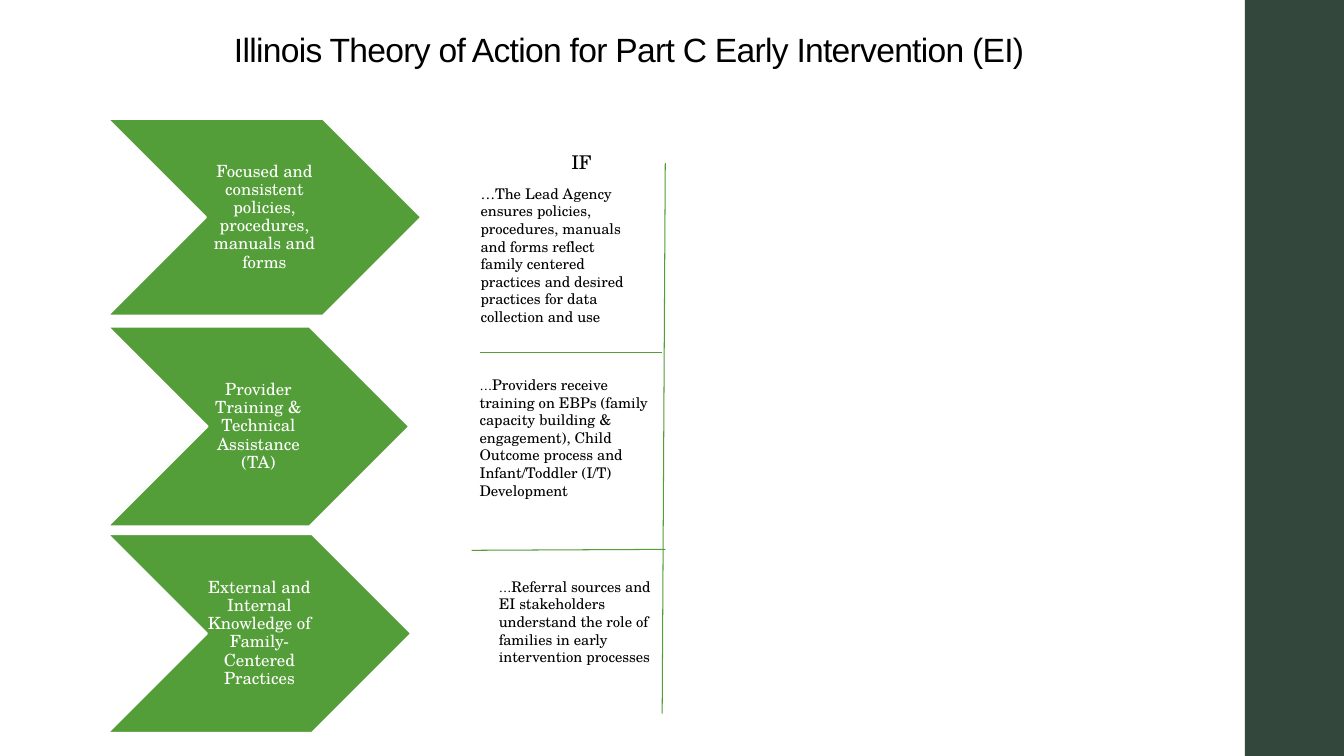
import pptx
import pptx.util
import pptx.dml.color
import pptx.enum.shapes
import pptx.enum.text
import pptx.oxml.ns
import lxml.etree

Pt = pptx.util.Pt
RGBColor = pptx.dml.color.RGBColor
ALIGN = pptx.enum.text.PP_ALIGN
ANCHOR = pptx.enum.text.MSO_ANCHOR
SHAPE = pptx.enum.shapes.MSO_SHAPE
STRAIGHT = pptx.enum.shapes.MSO_CONNECTOR.STRAIGHT

GREEN = RGBColor(0x54, 0x9E, 0x39)
DARK_GREEN = RGBColor(0x34, 0x47, 0x3D)
WHITE = RGBColor(0xFF, 0xFF, 0xFF)
BLACK = RGBColor(0x00, 0x00, 0x00)
TITLE_FONT = "Arial"
BODY_FONT = "TeX Gyre Schola"

SLIDE_WIDTH, SLIDE_HEIGHT = 960, 540
STRATEGY_PITCH = 148.3

# Width and height of each chevron, with its label
STRATEGIES = [
    (223.9, 140.4, "Focused and consistent policies, procedures, manuals and forms"),
    (215.3, 142.6, "Provider Training & Technical Assistance (TA)"),
    (216.7, 141.8, "External and Internal Knowledge of Family-Centered Practices"),
]

# Box relative to the IF column, anchor, size of the ellipsis, and wording
CONDITIONS = [
    ((0.7, 23.8, 124.6, 108.7), ANCHOR.TOP, 10.5,
     "The Lead Agency ensures policies, procedures, manuals and forms reflect "
     "family centered practices and desired practices for data collection and use"),
    ((0, 159.8, 137.5, 96.5), ANCHOR.MIDDLE, 9,
     "Providers receive training on EBPs (family capacity building & engagement), "
     "Child Outcome process and Infant/Toddler (I/T) Development"),
    ((13.7, 304.6, 125.3, 70.6), ANCHOR.TOP, 9,
     "Referral sources and EI stakeholders understand the role of families in "
     "early intervention processes"),
]

# Start and end of each divider, relative to the IF column
DIVIDERS = [
    ((7.2, 147.6), (137.5, 147.6)),
    ((1.4, 288.7), (139.7, 288)),
    ((139.7, 12.2), (137.5, 405.4)),
]


def add_run(paragraph, text, size, color, font=BODY_FONT):
    run = paragraph.add_run()
    run.text = text
    run.font.size = Pt(size)
    run.font.name = font
    run.font.color.rgb = color
    return run


def add_text(slide, box, anchor=ANCHOR.TOP, align=ALIGN.LEFT):
    """Add a wrapping text box and return its first paragraph."""
    frame = slide.shapes.add_textbox(*map(Pt, box)).text_frame
    frame.word_wrap = True
    frame.vertical_anchor = anchor
    paragraph = frame.paragraphs[0]
    paragraph.alignment = align
    return paragraph


def add_filled_shape(slide, preset, box, color):
    shape = slide.shapes.add_shape(preset, *map(Pt, box))
    shape.shadow.inherit = False
    shape.fill.solid()
    shape.fill.fore_color.rgb = color
    shape.line.fill.background()
    return shape


def add_side_band(slide, left):
    box = (left, 0, SLIDE_WIDTH - left, SLIDE_HEIGHT)
    add_filled_shape(slide, SHAPE.RECTANGLE, box, DARK_GREEN)


def add_title(slide, box):
    heading = add_text(slide, box, ANCHOR.BOTTOM, ALIGN.CENTER)
    heading.line_spacing = 0.9
    run = add_run(heading, "Illinois Theory of Action for Part C Early Intervention (EI)",
                  24, BLACK, TITLE_FONT)
    run.font._element.set("spc", "-50")


def add_strategies(slide, left, top):
    """Stack the chevrons at an equal pitch, each with its label inside."""
    for row, (width, height, label) in enumerate(STRATEGIES):
        box = (left, top + row * STRATEGY_PITCH, width, height)
        chevron = add_filled_shape(slide, SHAPE.CHEVRON, box, GREEN)
        chevron.line.color.rgb = WHITE
        chevron.line.width = Pt(1.35)
        frame = chevron.text_frame
        frame.word_wrap = True
        frame.vertical_anchor = ANCHOR.MIDDLE
        frame.margin_left = frame.margin_right = 0
        frame.margin_top = frame.margin_bottom = Pt(0.6)
        paragraph = frame.paragraphs[0]
        paragraph.alignment = ALIGN.CENTER
        paragraph.line_spacing = 0.9
        add_run(paragraph, label, 12, WHITE)


def add_divider(slide, start, end):
    divider = slide.shapes.add_connector(STRAIGHT, *map(Pt, start + end))
    divider.line.color.rgb = GREEN
    divider.line.width = Pt(0.75)
    properties = divider._element.spPr
    lxml.etree.SubElement(properties, pptx.oxml.ns.qn("a:effectLst"))


def add_if_column(slide, left, top):
    heading = add_text(slide, (left + 46, top, 67.7, 23.8), align=ALIGN.CENTER)
    add_run(heading, "IF", 13.5, BLACK)
    for (x, y, width, height), anchor, ellipsis_size, wording in CONDITIONS:
        condition = add_text(slide, (left + x, top + y, width, height), anchor)
        add_run(condition, "…", ellipsis_size, BLACK)
        add_run(condition, wording, 10.5, BLACK)
    for (x1, y1), (x2, y2) in DIVIDERS:
        add_divider(slide, (left + x1, top + y1), (left + x2, top + y2))


def main():
    presentation = pptx.Presentation()
    presentation.slide_width = Pt(SLIDE_WIDTH)
    presentation.slide_height = Pt(SLIDE_HEIGHT)
    slide = presentation.slides.add_slide(presentation.slide_layouts[6])
    add_side_band(slide, 889.2)
    add_title(slide, (139, 13.7, 620.6, 39.6))
    add_strategies(slide, 77, 85)
    add_if_column(slide, 335.5, 104.4)
    presentation.save("out.pptx")


if __name__ == "__main__":
    main()
